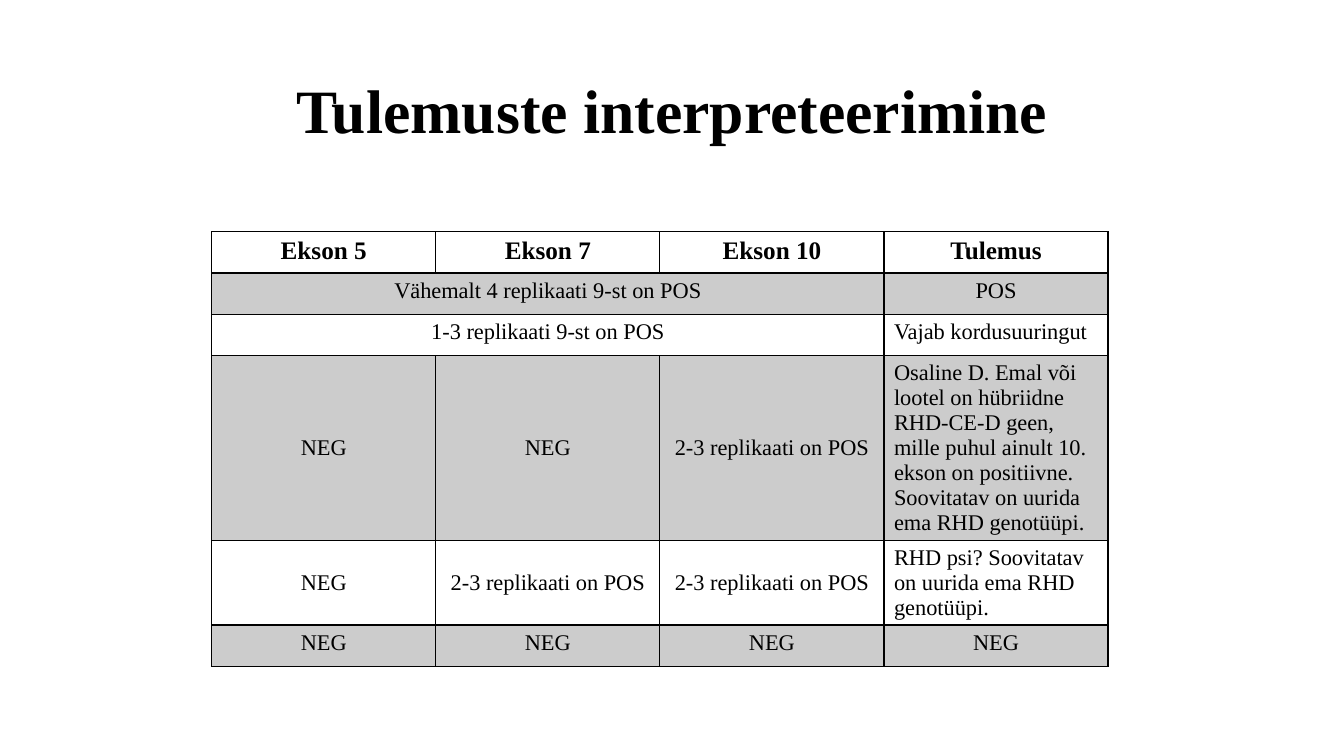
from lxml.etree import SubElement
from pptx import Presentation
from pptx.dml.color import RGBColor
from pptx.enum.text import MSO_ANCHOR, PP_ALIGN
from pptx.oxml.ns import qn
from pptx.util import Inches, Pt

COLORS = {"text": "000000", "line": "000000", "band": "CCCCCC", "plain": "FFFFFF"}
FONT = "Times New Roman"
HEADERS = ["Ekson 5", "Ekson 7", "Ekson 10", "Tulemus"]
POS_REPLICATES = "2-3 replikaati on POS"
RESULTS = [
    ["Vähemalt 4 replikaati 9-st on POS", "", "", "POS"],
    ["1-3 replikaati 9-st on POS", "", "", "Vajab kordusuuringut"],
    ["NEG", "NEG", POS_REPLICATES,
     "Osaline D. Emal või lootel on hübriidne RHD-CE-D geen, mille puhul ainult 10. "
     "ekson on positiivne. Soovitatav on uurida ema RHD genotüüpi."],
    ["NEG", POS_REPLICATES, POS_REPLICATES,
     "RHD psi? Soovitatav on uurida ema RHD genotüüpi."],
    ["NEG"] * 4,
]
ROW_HEIGHTS = [0.41, 0.41, 0.41, 1.83, 0.84, 0.41]
TALL_ROWS = (3, 4)
LEFT_ALIGNED_ROWS = (2, 3, 4)


def set_text(tf, text, size=16, bold=False, align=PP_ALIGN.CENTER, spacing=1.0):
    p = tf.paragraphs[0]
    p.alignment = align
    p.line_spacing = spacing
    r = p.add_run()
    r.text = text
    r.font.name = FONT
    r.font.size = Pt(size)
    r.font.bold = bold
    r.font.color.rgb = RGBColor.from_string(COLORS["text"])


def set_borders(cell, widths):
    tc_pr = cell._tc.get_or_add_tcPr()
    for side, width in widths.items():
        ln = SubElement(tc_pr, qn(f"a:ln{side}"), w=str(Pt(width)))
        fill = SubElement(ln, qn("a:solidFill"))
        SubElement(fill, qn("a:srgbClr"), val=COLORS["line"])


def add_title(s, text, left, top, width, height):
    title = s.shapes.title
    title.left, title.top = Inches(left), Inches(top)
    title.width, title.height = Inches(width), Inches(height)
    title.text_frame.vertical_anchor = MSO_ANCHOR.MIDDLE
    set_text(title.text_frame, text, size=44, bold=True, spacing=0.9)


def add_results(s, left, top, width):
    rows = [HEADERS] + RESULTS
    table = s.shapes.add_table(len(rows), len(HEADERS), Inches(left), Inches(top),
                               Inches(width), Inches(sum(ROW_HEIGHTS))).table
    table.first_row = table.horz_banding = False
    for column in table.columns:
        column.width = Inches(width / len(HEADERS))
    for row, height in zip(table.rows, ROW_HEIGHTS):
        row.height = Inches(height)
    for i in (1, 2):
        table.cell(i, 0).merge(table.cell(i, 2))

    for i, texts in enumerate(rows):
        for j, text in enumerate(texts):
            cell = table.cell(i, j)
            sides = "TB" if cell.is_spanned else "LRTB"
            set_borders(cell, {side: 2 if (i, side) in ((0, "B"), (1, "T")) else 1
                               for side in sides})
            cell.fill.solid()
            fill = COLORS["band" if i % 2 else "plain"]
            cell.fill.fore_color.rgb = RGBColor.from_string(fill)
            if cell.is_spanned:
                continue
            is_result = j == len(HEADERS) - 1
            if i in TALL_ROWS and not is_result:
                cell.vertical_anchor = MSO_ANCHOR.MIDDLE
            left_aligned = is_result and i in LEFT_ALIGNED_ROWS
            set_text(cell.text_frame, text, size=16 if i else 18, bold=i == 0,
                     align=PP_ALIGN.LEFT if left_aligned else PP_ALIGN.CENTER)


def main():
    prs = Presentation()
    prs.slide_width, prs.slide_height = Inches(13.33), Inches(7.5)
    s = prs.slides.add_slide(prs.slide_layouts[5])
    add_title(s, "Tulemuste interpreteerimine", 0.92, 0.4, 11.5, 1.45)
    add_results(s, 2.1, 2.3, 8.89)
    prs.save("out.pptx")


if __name__ == "__main__":
    main()
